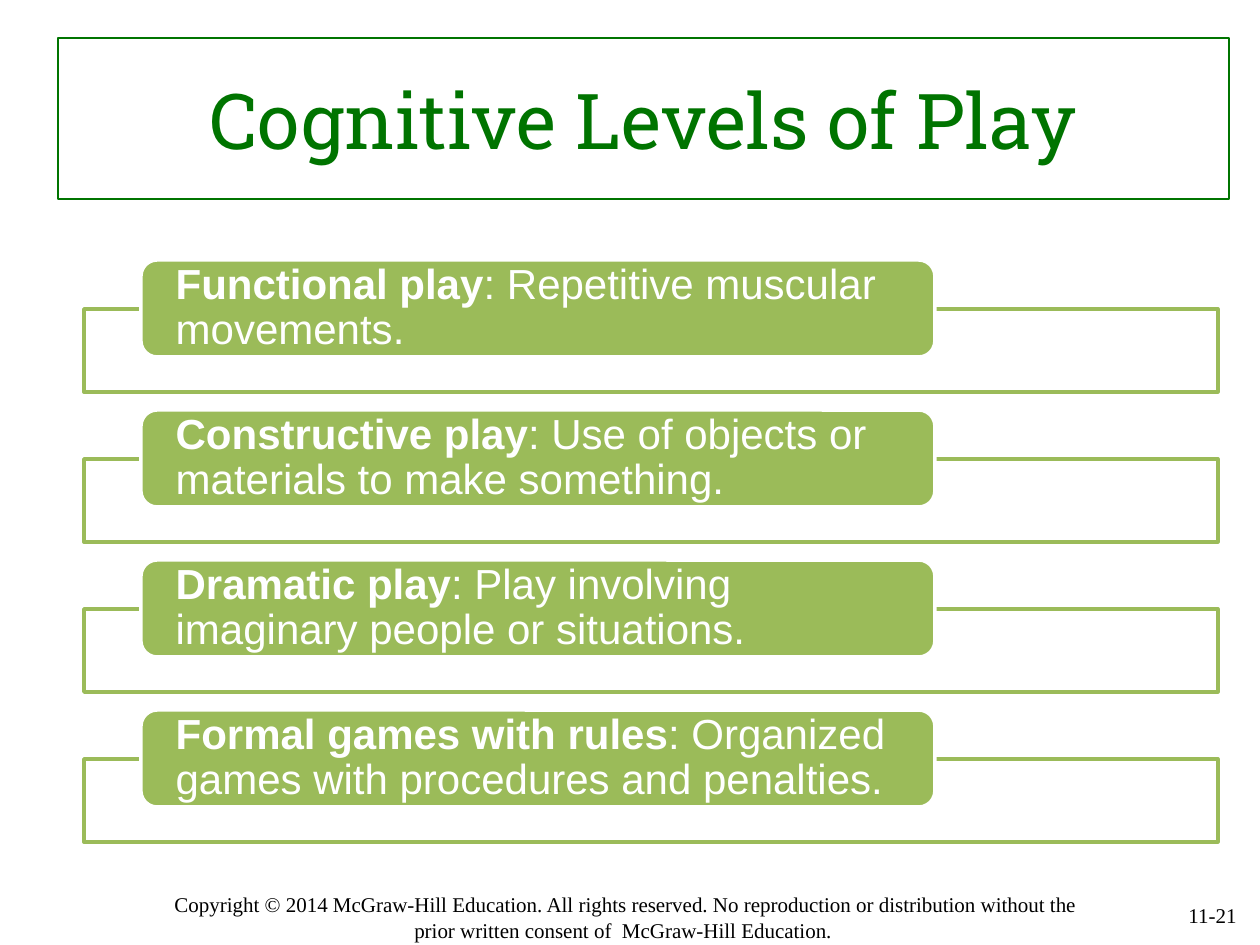
from pptx import Presentation
from pptx import util as u
from pptx.dml.color import RGBColor
from pptx.enum import shapes, text
from pptx.oxml.ns import qn
from lxml import etree

PX = 914400 / 126
GREEN, LIME, WHITE, BLACK = "007400", "9BBB59", "FFFFFF", "000000"


def rgb(value):
    return RGBColor.from_string(value)


def add_box(kind, left, top, width, height, fill=None, line=None, weight=0, margins=None):
    """Add a box in px; without a kind it is a plain text box."""
    area = [u.Emu(round(v * PX)) for v in (left, top, width, height)]
    if kind is None:
        sp = s.shapes.add_textbox(*area)
    else:
        sp = s.shapes.add_shape(kind, *area)
        sp.shadow.inherit = False
        sp.line.color.rgb = rgb(line)
        sp.line.width = u.Pt(weight)
        if fill:
            sp.fill.solid()
            sp.fill.fore_color.rgb = rgb(fill)
        else:
            sp.fill.background()
    tf = sp.text_frame
    tf.word_wrap = True
    tf.vertical_anchor = text.MSO_ANCHOR.MIDDLE
    if margins:
        side, end = (u.Emu(round(m * PX)) for m in margins)
        tf.margin_left = tf.margin_right = side
        tf.margin_top = tf.margin_bottom = end
    return sp


def set_text(sp, runs, size, font, color, align):
    p = sp.text_frame.paragraphs[0]
    p.alignment = align
    p.font.size = u.Pt(size)
    p.font.name = font
    p.font.color.rgb = rgb(color)
    for words, bold in runs:
        r = p.add_run()
        r.text = words
        r.font.bold = bold
    return p


prs = Presentation()
prs.slide_width, prs.slide_height = u.Inches(10), u.Inches(7.5)
s = prs.slides.add_slide(prs.slide_layouts[6])
RECT = shapes.MSO_SHAPE.RECTANGLE
ROUNDED = shapes.MSO_SHAPE.ROUNDED_RECTANGLE
LEFT, CENTER, RIGHT = text.PP_ALIGN.LEFT, text.PP_ALIGN.CENTER, text.PP_ALIGN.RIGHT

# Footer and page number
footer = add_box(None, 160, 892, 932, 50, margins=(0, 0))
footer.text_frame.vertical_anchor = text.MSO_ANCHOR.TOP
notice = ("Copyright © 2014 McGraw-Hill Education. All rights reserved. No reproduction or "
          "distribution without the prior written consent of  McGraw-Hill Education. ")
set_text(footer, [(notice, False)], 12, "Times New Roman", BLACK, CENTER)
number = add_box(None, 955, 890, 294, 50)
set_text(number, [("11-21", False)], 12, "Times New Roman", BLACK, RIGHT)

# Title
title = add_box(RECT, 58, 38, 1171, 161, line=GREEN, weight=1.25)
set_text(title, [("Cognitive Levels of Play", False)], 44, "Roboto Slab", GREEN, CENTER)

# Levels: an outlined bar with a rounded label over its top edge
levels = [
    ("Functional play", "Repetitive muscular movements."),
    ("Constructive play", "Use of objects or materials to make something."),
    ("Dramatic play", "Play involving imaginary people or situations."),
    ("Formal games with rules", "Organized games with procedures and penalties."),
]
for i, (name, meaning) in enumerate(levels):
    top = 260 + 150 * i
    bar = add_box(RECT, 84, top + 49, 1134, 83, WHITE, LIME, 2)
    tint = bar.fill._xPr.find(qn("a:solidFill"))[0]
    etree.SubElement(tint, qn("a:alpha"), val="90000")
    label = add_box(ROUNDED, 141, top, 794, 97, LIME, WHITE, 2, margins=(30, 0))
    p = set_text(label, [(name, True), (": " + meaning, False)], 24, "Arial", WHITE, LEFT)
    p.line_spacing = 0.9

prs.save("out.pptx")
